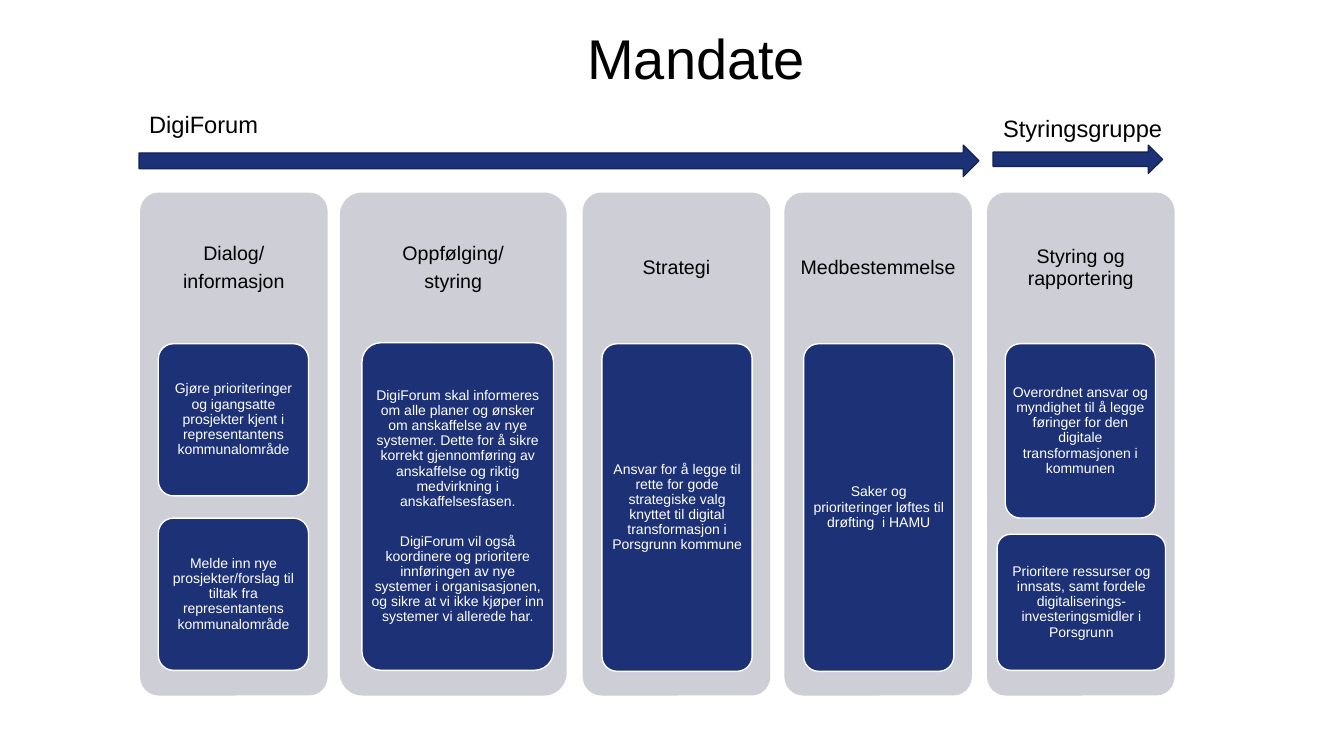
import pptx
import pptx.util
import pptx.dml.color
import pptx.enum.shapes
import pptx.enum.text

PX = 9144  # 100 px to the inch
NAVY, GREY, WHITE, BLACK, EDGE = "1D3176", "CDCED6", "FFFFFF", "000000", "152457"
Shape = pptx.enum.shapes.MSO_SHAPE
Align = pptx.enum.text.PP_ALIGN
Anchor = pptx.enum.text.MSO_ANCHOR


def paint(target, colour):
    """Give a fill, or the font of a paragraph, a solid hex colour."""
    target.solid()
    target.fore_color.rgb = pptx.dml.color.RGBColor.from_string(colour)


def add_block(kind, box, fill, line=None, paragraphs=(), size=10, ink=WHITE,
              margins=(3, 2, 3, 2), gap=0):
    """Add a filled shape holding centred paragraphs."""
    block = slide.shapes.add_shape(kind, *(v * PX for v in box))
    block.shadow.inherit = False
    paint(block.fill, fill)
    if line:
        paint(block.line.fill, line)
        block.line.width = pptx.util.Pt(1)
    else:
        block.line.fill.background()
    if kind == Shape.ROUNDED_RECTANGLE:
        block.adjustments[0] = 0.1
    frame = block.text_frame
    frame.word_wrap = True
    frame.vertical_anchor = Anchor.MIDDLE
    (frame.margin_left, frame.margin_top,
     frame.margin_right, frame.margin_bottom) = (m * PX for m in margins)
    for i, text in enumerate(paragraphs):
        paragraph = frame.add_paragraph() if i else frame.paragraphs[0]
        paragraph.text = text
        paragraph.alignment = Align.CENTER
        paragraph.line_spacing = 0.9
        paragraph.space_after = pptx.util.Pt(size * 0.35)
        if i and gap:
            paragraph.space_before = pptx.util.Pt(gap)
        paragraph.font.name = "Arial"
        paragraph.font.size = pptx.util.Pt(size)
        paint(paragraph.font.fill, ink)


deck = pptx.Presentation()
deck.slide_width, deck.slide_height = 1333 * PX, 750 * PX
slide = deck.slides.add_slide(deck.slide_layouts[5])

# Title
title = slide.shapes.title
title.left, title.top, title.width, title.height = (v * PX for v in (116, 16, 1149, 80))
title.text_frame.text = "Mandate"
title.text_frame.vertical_anchor = Anchor.BOTTOM
heading = title.text_frame.paragraphs[0]
heading.alignment = Align.CENTER
heading.line_spacing = 0.9
heading.font.name = "Arial"
heading.font.size = pptx.util.Pt(40)
paint(heading.font.fill, BLACK)

# Columns: left, width, heading, cards (left, top, width, height, paragraphs)
columns = [
    (139, 186, ["Dialog/", "informasjon"], [
        (157, 341, 149, 151, ["Gjøre prioriteringer og igangsatte prosjekter kjent i "
                              "representantens kommunalområde"]),
        (157, 514, 149, 151, ["Melde inn nye prosjekter/forslag til tiltak fra "
                              "representantens kommunalområde"])]),
    (337, 225, ["Oppfølging/", "styring"], [
        (359, 340, 190, 325, [
            "DigiForum skal informeres om alle planer og ønsker om anskaffelse av nye "
            "systemer. Dette for å sikre korrekt gjennomføring av anskaffelse og riktig "
            "medvirkning i anskaffelsesfasen.",
            "DigiForum vil også koordinere og prioritere innføringen av nye systemer i "
            "organisasjonen, og sikre at vi ikke kjøper inn systemer vi allerede har."])]),
    (578, 186, ["Strategi"], [
        (597, 341, 149, 325, ["Ansvar for å legge til rette for gode strategiske valg "
                              "knyttet til digital transformasjon i Porsgrunn kommune"])]),
    (778, 186, ["Medbestemmelse"], [
        (797, 341, 149, 325, ["Saker og prioriteringer løftes til drøfting  i HAMU"])]),
    (979, 186, ["Styring og rapportering"], [
        (997, 341, 149, 173, ["Overordnet ansvar og myndighet til å legge føringer for den "
                              "digitale transformasjonen i kommunen"]),
        (989, 530, 167, 135, ["Prioritere ressurser og innsats, samt fordele "
                              "digitaliserings-investeringsmidler i Porsgrunn"])]),
]
for left, width, name, cards in columns:
    # The deep bottom margin keeps the heading above the cards
    add_block(Shape.ROUNDED_RECTANGLE, (left, 191, width, 499), GREY, None, name,
              14, BLACK, (1, 1, 1, 350))
    for *box, paragraphs in cards:
        add_block(Shape.ROUNDED_RECTANGLE, box, NAVY, WHITE, paragraphs, gap=14)

# Arrows and their labels
groups = [
    ("Styringsgruppe", (985, 108, 216, 38), (985, 144, 168, 28)),
    ("DigiForum", (138, 104, 499, 38), (138, 144, 833, 31)),
]
for group, label_box, arrow_box in groups:
    add_block(Shape.RIGHT_ARROW, arrow_box, NAVY, EDGE)
    label = slide.shapes.add_textbox(*(v * PX for v in label_box))
    label.text_frame.word_wrap = True
    caption = label.text_frame.paragraphs[0]
    caption.text = group
    caption.font.name = "Arial"
    caption.font.size = pptx.util.Pt(16.9)
    paint(caption.font.fill, BLACK)

deck.save("out.pptx")
